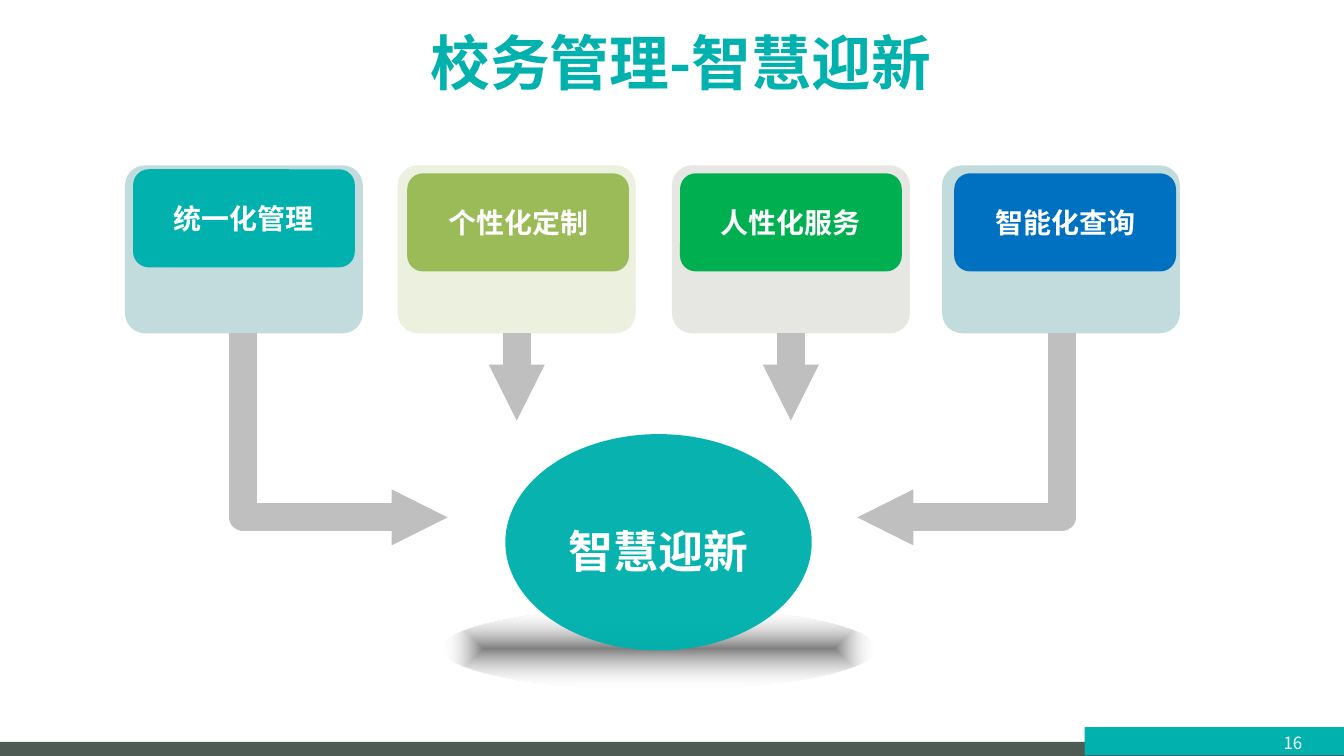
from pptx import Presentation
from pptx import util as u
from pptx.dml import color
from pptx.enum import shapes, text
from pptx.oxml import parse_xml
from pptx.oxml.ns import nsdecls, qn
from lxml import etree

FONT = "Noto Sans CJK SC"
COLORS = {
    "teal": "00B1AD", "slate": "4E5A54", "white": "FFFFFF", "arrow": "BFBFBF",
    "pale_teal": "C2DBDC", "pale_green": "EBF1DE", "pale_gray": "E6E6E2",
    "olive": "9BBB59", "green": "00B050", "blue": "0070C0", "shade": "808080",
}
CARD_TOP, CARD_WIDTH, CARD_HEIGHT = 1.23, 1.77, 1.25
CARD_BOTTOM = CARD_TOP + CARD_HEIGHT
FEATURES = [
    ("统一化管理", 0.93, "pale_teal", 0.99, 1.26, "teal"),
    ("个性化定制", 2.96, "pale_green", 3.03, 1.29, "olive"),
    ("人性化服务", 5.0, "pale_gray", 5.06, 1.29, "green"),
    ("智能化查询", 7.01, "pale_teal", 7.1, 1.29, "blue"),
]


def rgb(name):
    return color.RGBColor.from_string(COLORS[name])


def write(frame, words, size, tint="white", bold=True, wrap=True):
    frame.word_wrap = wrap
    frame.vertical_anchor = text.MSO_ANCHOR.MIDDLE
    paragraph = frame.paragraphs[0]
    paragraph.text = words
    paragraph.alignment = text.PP_ALIGN.CENTER
    font = paragraph.font
    font.name, font.size, font.bold = FONT, u.Pt(size), bold
    font.color.rgb = rgb(tint)
    defaults = paragraph._p.pPr.find(qn("a:defRPr"))
    etree.SubElement(defaults, qn("a:ea"), typeface=FONT)
    return paragraph


def add_block(slide, kind, left, top, width, height, fill, corner=None):
    block = slide.shapes.add_shape(kind, *map(u.Inches, (left, top, width, height)))
    block.shadow.inherit = False
    block.line.fill.background()
    block.fill.solid()
    block.fill.fore_color.rgb = rgb(fill)
    if corner is not None:
        block.adjustments[0] = corner
    return block


def add_label(slide, left, top, width, height, words, size, **style):
    label = slide.shapes.add_textbox(*map(u.Inches, (left, top, width, height)))
    write(label.text_frame, words, size, **style)


def style_arrow(arrow):
    arrow.line.width = u.Pt(15)
    arrow.line.color.rgb = rgb("arrow")
    line = arrow.line._ln
    etree.SubElement(line, qn("a:round"))
    etree.SubElement(line, qn("a:tailEnd"), type="triangle", w="sm", len="sm")


def add_down_arrow(slide, card):
    middle = card.left + card.width // 2
    arrow = slide.shapes.add_connector(
        shapes.MSO_CONNECTOR.STRAIGHT, middle, u.Inches(CARD_BOTTOM), middle, u.Inches(3.13))
    arrow.begin_connect(card, 2)
    style_arrow(arrow)
    etree.SubElement(arrow._element.spPr, qn("a:effectLst"))


def add_elbow_arrow(slide, start_x, end_x):
    start, end, top, turn = map(u.Inches, (start_x, end_x, CARD_BOTTOM, 3.85))
    builder = slide.shapes.build_freeform(start, top)
    builder.add_line_segments([(start, turn), (end, turn)], close=False)
    arrow = builder.convert_to_shape()
    arrow.shadow.inherit = False
    arrow.fill.background()
    style_arrow(arrow)


def add_floor_shadow(slide):
    floor = add_block(slide, shapes.MSO_SHAPE.OVAL, 3.29, 4.52, 3.22, 0.61, "shade")
    gradient = parse_xml(
        f'<a:gradFill {nsdecls("a")} rotWithShape="1"><a:gsLst>'
        f'<a:gs pos="0"><a:srgbClr val="{COLORS["shade"]}"/></a:gs>'
        f'<a:gs pos="100000"><a:srgbClr val="{COLORS["white"]}"><a:alpha val="0"/></a:srgbClr></a:gs>'
        '</a:gsLst><a:path path="shape">'
        '<a:fillToRect l="50000" t="50000" r="50000" b="50000"/></a:path></a:gradFill>')
    properties = floor._element.spPr
    properties.replace(properties.find(qn("a:solidFill")), gradient)


def add_core(slide):
    core = add_block(slide, shapes.MSO_SHAPE.OVAL, 3.76, 3.23, 2.28, 1.61, "teal")
    tint = core._element.spPr.find(qn("a:solidFill"))[0]
    etree.SubElement(tint, qn("a:alpha"), val="97000")
    write(core.text_frame, "智慧迎新", 24).line_spacing = 1.3


def main():
    deck = Presentation()
    deck.slide_width = u.Inches(10)
    deck.slide_height = deck.slide_width * 9 // 16
    slide = deck.slides.add_slide(deck.slide_layouts[6])
    rounded = shapes.MSO_SHAPE.ROUNDED_RECTANGLE

    add_block(slide, shapes.MSO_SHAPE.RECTANGLE, 0, 5.52, 10, 0.11, "slate")
    add_block(slide, shapes.MSO_SHAPE.RECTANGLE, 8.07, 5.41, 1.93, 0.21, "teal")
    add_label(slide, 0.61, -0.01, 8.91, 0.94, "校务管理-智慧迎新", 32, tint="teal")
    add_label(slide, 9.33, 5.38, 0.58, 0.3, "16", 9, bold=False)

    cards = [add_block(slide, rounded, left, CARD_TOP, CARD_WIDTH, CARD_HEIGHT, pale, 0.12)
             for _, left, pale, *_ in FEATURES]
    for card in cards[1:3]:
        add_down_arrow(slide, card)
    add_elbow_arrow(slide, 7.9, 6.38)
    add_elbow_arrow(slide, 1.81, 3.33)

    for words, _, _, left, top, fill in FEATURES:
        heading = add_block(slide, rounded, left, top, 1.65, 0.73, fill, 0.16)
        write(heading.text_frame, words, 15, wrap=False)

    add_floor_shadow(slide)
    add_core(slide)
    deck.save("out.pptx")


if __name__ == "__main__":
    main()
